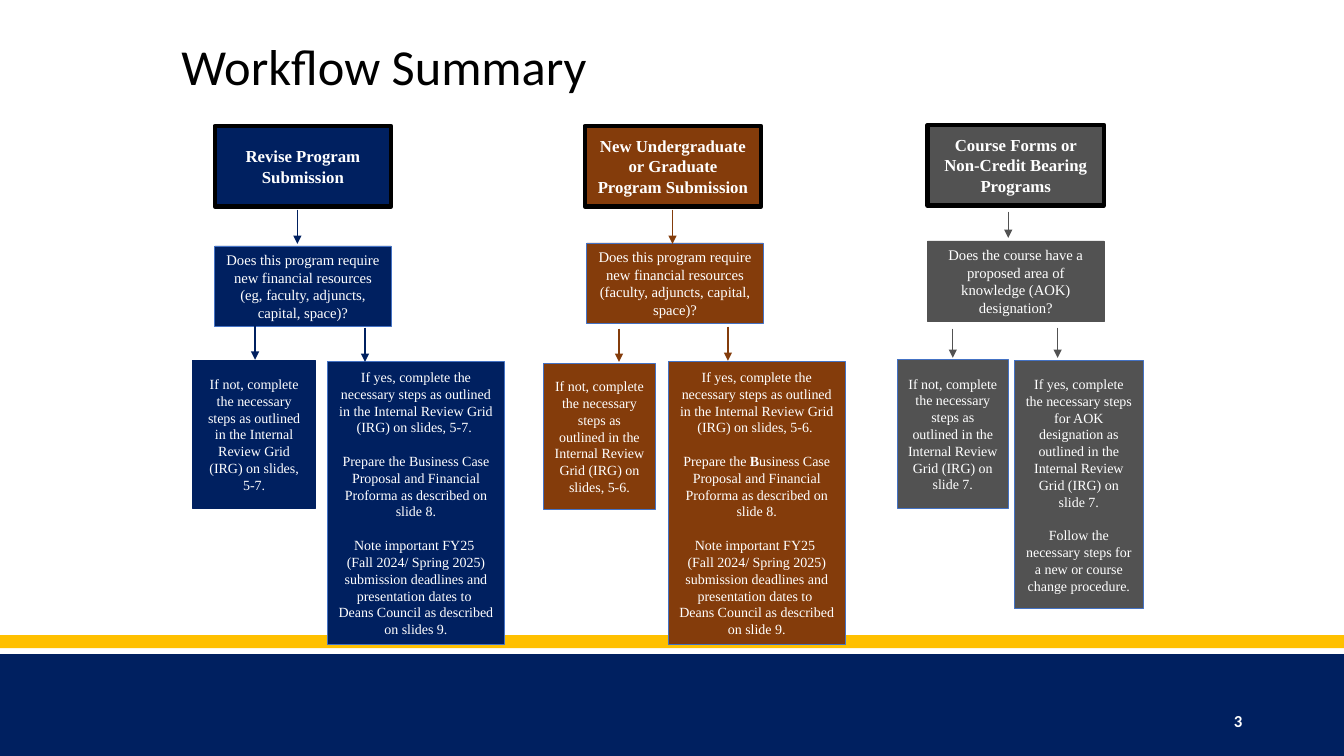
from lxml.etree import SubElement
from pptx import Presentation
from pptx.dml.color import RGBColor
from pptx.enum.shapes import MSO_CONNECTOR, MSO_SHAPE
from pptx.enum.text import MSO_ANCHOR, MSO_AUTO_SIZE, PP_ALIGN
from pptx.oxml.ns import qn
from pptx.util import Inches, Pt

NAVY, BROWN, GRAY = "002060", "843C0B", "525252"
GOLD, BLUE, BLACK, WHITE = "FFC000", "4472C4", "000000", "FFFFFF"
SERIF, SANS = "Times New Roman", "Calibri"
BOX_WIDTH, BOX_HEIGHT = 1.75, 0.8

PREPARE = ("Prepare the {} Case Proposal and Financial Proforma "
           "as described on slide 8.")
DEADLINES = ("Note important FY25 \n(Fall 2024/ Spring 2025) submission deadlines "
             "and presentation dates to \nDeans Council as described on {} 9.")
STEPS = "complete the necessary steps as outlined in the Internal Review Grid (IRG) on"

# Offsets are inches from the heading box; arrows are (x, y, length).
# Asterisks surround bold letters.
COLUMNS = [
    dict(
        origin=(2.13, 1.25), color=NAVY,
        heading="Revise Program Submission",
        question="Does this program require new financial resources "
                 "(eg, faculty, adjuncts, capital, space)?",
        question_at=(0, 1.19), question_line=BLUE,
        no=[f"If not, {STEPS} slides, 5-7."],
        no_box=(-0.22, 2.33, 1.22, 1.46), no_line=NAVY,
        yes=[f"If yes, {STEPS} slides, 5-7. ",
             PREPARE.format("Business"), DEADLINES.format("slides")],
        yes_box=(1.12, 2.34, 1.75, 2.8),
        arrows=[(0.82, 0.83, 0.34), (0.4, 1.98, 0.34), (1.49, 2, 0.34)],
    ),
    dict(
        origin=(5.8, 1.25), color=BROWN,
        heading="New Undergraduate or Graduate Program Submission",
        question="Does this program require new financial resources "
                 "(faculty, adjuncts, capital, space)?",
        question_at=(0.02, 1.16), question_line=BLUE,
        no=[f"If not, {STEPS} slides, 5-6."],
        no_box=(-0.41, 2.36, 1.11, 1.44), no_line=BLUE,
        yes=[f"If yes, {STEPS} slides, 5-6. ",
             PREPARE.format("*B*usiness"), DEADLINES.format("slide")],
        yes_box=(0.83, 2.34, 1.75, 2.8),
        arrows=[(0.87, 0.83, 0.34), (0.34, 2.01, 0.33), (1.42, 1.99, 0.34)],
    ),
    dict(
        origin=(9.2, 1.24), color=GRAY,
        heading="Course Forms or Non-Credit Bearing Programs",
        question="Does the course have a proposed area of knowledge (AOK) designation?",
        question_at=(0, 1.15), question_line=GRAY,
        no=[f"If not, {STEPS} slide 7."],
        no_box=(-0.3, 2.33, 1.1, 1.47), no_line=BLUE,
        yes=["If yes, complete the necessary steps for AOK designation as outlined "
             "in the Internal Review Grid (IRG) on slide 7.",
             "Follow the necessary steps for a new or course change procedure."],
        yes_box=(0.86, 2.34, 1.28, 2.46),
        arrows=[(0.8, 0.86, 0.26), (0.25, 2.02, 0.29), (1.29, 2.01, 0.3)],
    ),
]


def rgb(color):
    return RGBColor.from_string(color)


def format_run(run, size, font, color, bold=False):
    run.font.size = Pt(size)
    run.font.name = font
    run.font.bold = bold
    run.font.color.rgb = rgb(color)


def add_box(slide, box, fill, line=None, line_width=0.5):
    shape = slide.shapes.add_shape(MSO_SHAPE.RECTANGLE, *map(Inches, box))
    shape.shadow.inherit = False
    shape.fill.solid()
    shape.fill.fore_color.rgb = rgb(fill)
    if line:
        shape.line.color.rgb = rgb(line)
        shape.line.width = Pt(line_width)
    else:
        shape.line.fill.background()
    return shape


def write_centered(shape, paragraphs, size, bold=False):
    frame = shape.text_frame
    frame.word_wrap = True
    frame.vertical_anchor = MSO_ANCHOR.MIDDLE
    for number, text in enumerate(paragraphs):
        paragraph = frame.add_paragraph() if number else frame.paragraphs[0]
        paragraph.alignment = PP_ALIGN.CENTER
        if number:
            paragraph.space_before = Pt(12)
        parts = text.split("*")
        paragraph.text = parts[0]
        for part in parts[1:]:
            paragraph.add_run().text = part
        for index, run in enumerate(paragraph.runs):
            emphasized = len(parts) > 1 and index % 2 == 1
            format_run(run, size, SERIF, WHITE, bold or emphasized)


def add_arrow(slide, x, y, length, color):
    arrow = slide.shapes.add_connector(
        MSO_CONNECTOR.STRAIGHT, Inches(x), Inches(y), Inches(x), Inches(y + length))
    arrow.line.color.rgb = rgb(color)
    arrow.line.width = Pt(1)
    SubElement(arrow.line._get_or_add_ln(), qn("a:tailEnd"), type="triangle")
    SubElement(arrow._element.spPr, qn("a:effectLst"))


def add_footer(slide, left, top, width):
    # Gold stripe above the navy band
    add_box(slide, (left, top, width, 0.13), GOLD)
    add_box(slide, (left, top + 0.19, width, 1.01), NAVY)
    # Page number
    number = slide.shapes.add_textbox(
        Inches(left + 9.42), Inches(top + 0.65), Inches(3), Inches(0.4))
    frame = number.text_frame
    frame.word_wrap = True
    frame.vertical_anchor = MSO_ANCHOR.MIDDLE
    frame.text = "3"
    frame.paragraphs[0].alignment = PP_ALIGN.RIGHT
    format_run(frame.paragraphs[0].runs[0], 12, SANS, WHITE, True)


def add_title(slide, left, top, width, height):
    title = slide.shapes.title
    title.left, title.top = Inches(left), Inches(top)
    title.width, title.height = Inches(width), Inches(height)
    frame = title.text_frame
    frame.text = "Workflow Summary"
    frame.auto_size = MSO_AUTO_SIZE.NONE
    frame.vertical_anchor = MSO_ANCHOR.MIDDLE
    paragraph = frame.paragraphs[0]
    paragraph.alignment = PP_ALIGN.LEFT
    paragraph.line_spacing = 0.9
    format_run(paragraph.runs[0], 36, SANS, BLACK)


def add_column(slide, column):
    left, top = column["origin"]
    color = column["color"]

    def place(x, y, width=BOX_WIDTH, height=BOX_HEIGHT):
        return left + x, top + y, width, height

    # Heading and question
    heading = add_box(slide, place(0, 0), color, BLACK, 3)
    write_centered(heading, [column["heading"]], 12, bold=True)
    question = add_box(slide, place(*column["question_at"]), color,
                       column["question_line"])
    write_centered(question, [column["question"]], 10.5)

    # Answers
    no_answer = add_box(slide, place(*column["no_box"]), color, column["no_line"])
    write_centered(no_answer, column["no"], 10)
    yes_answer = add_box(slide, place(*column["yes_box"]), color, BLUE)
    write_centered(yes_answer, column["yes"], 10)

    # Arrows
    for x, y, length in column["arrows"]:
        add_arrow(slide, left + x, top + y, length, color)


def main():
    presentation = Presentation()
    presentation.slide_width = Inches(13.33)
    presentation.slide_height = Inches(7.5)
    slide = presentation.slides.add_slide(presentation.slide_layouts[5])
    add_footer(slide, 0, 6.3, 13.33)
    add_title(slide, 1.7, 0.06, 9, 1.25)
    for column in COLUMNS:
        add_column(slide, column)
    presentation.save("out.pptx")


if __name__ == "__main__":
    main()
